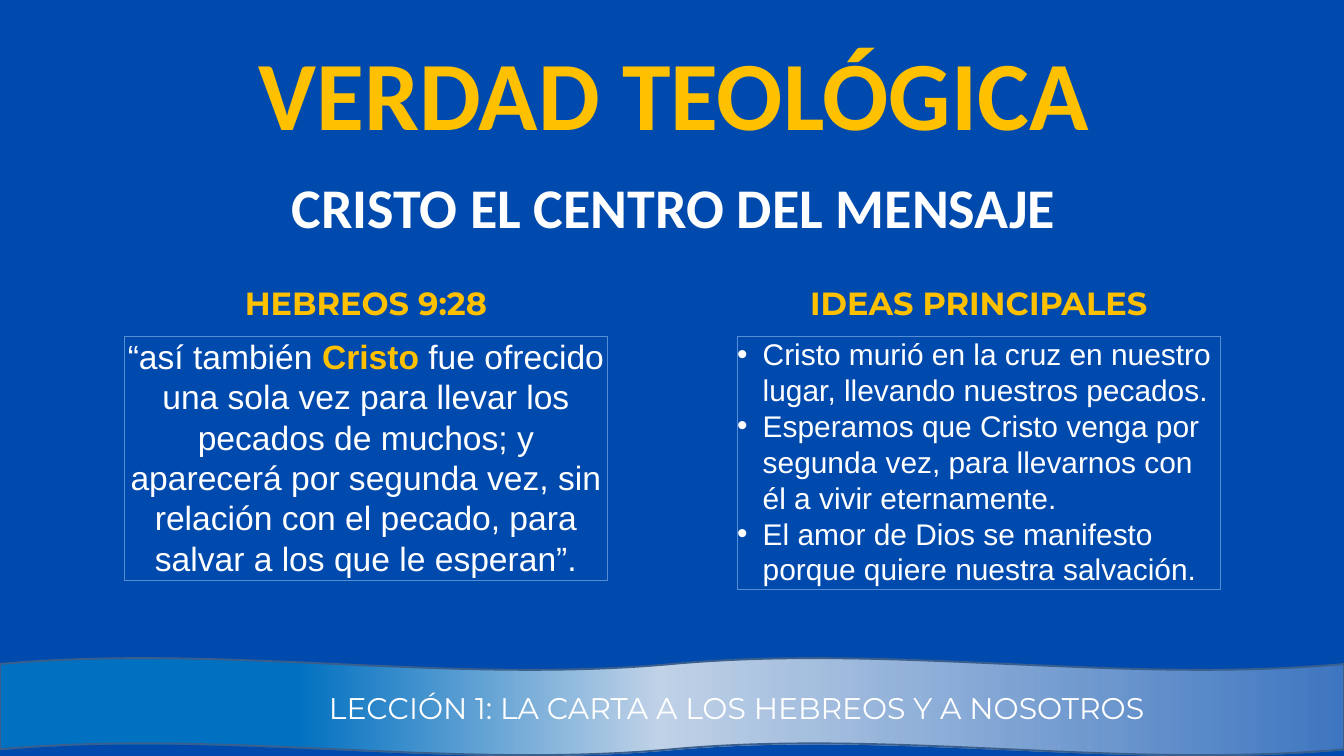
import copy
import lxml.etree
import pptx
import pptx.dml.color
import pptx.enum.shapes
import pptx.enum.text
import pptx.oxml.ns
import pptx.util

Inches = pptx.util.Inches
Pt = pptx.util.Pt
qn = pptx.oxml.ns.qn
align = pptx.enum.text.PP_ALIGN
kinds = pptx.enum.shapes.MSO_SHAPE
GOLD = "FFC000"
WHITE = "FFFFFF"


def hue(code):
    return pptx.dml.color.RGBColor.from_string(code)


def write(shape, text, size, font="Arial", color=WHITE, bold=False,
          lead=None, bullet=False, inset=(0, 0)):
    frame = shape.text_frame
    frame.word_wrap = True
    frame.auto_size = pptx.enum.text.MSO_AUTO_SIZE.SHAPE_TO_FIT_TEXT
    frame.vertical_anchor = pptx.enum.text.MSO_ANCHOR.TOP
    frame.margin_left = frame.margin_right = Inches(inset[0])
    frame.margin_top = frame.margin_bottom = Inches(inset[1])
    for row, line in enumerate(text.split("\n")):
        para = frame.add_paragraph() if row else frame.paragraphs[0]
        para.alignment = align.LEFT if bullet else align.CENTER
        if lead:
            para.line_spacing = Pt(lead)
        if bullet:
            props = para._p.get_or_add_pPr()
            props.set("marL", str(Inches(0.38)))
            props.set("indent", str(Inches(-0.38)))
            lead_font = lxml.etree.SubElement(props, qn("a:buFont"))
            lead_font.set("typeface", "Arial")
            lxml.etree.SubElement(props, qn("a:buChar")).set("char", "•")
        for part, words in enumerate(line.split("*")):
            run = para.add_run()
            run.text = words
            run.font.size = Pt(size)
            run.font.name = font
            run.font.bold = bold or part % 2 == 1
            run.font.color.rgb = hue(GOLD if part % 2 else color)


deck = pptx.Presentation()
deck.slide_width = Inches(20)
deck.slide_height = Inches(11.25)
slide = deck.slides.add_slide(deck.slide_layouts[5])
slide.background.fill.solid()
slide.background.fill.fore_color.rgb = hue("004AAD")
shapes = slide.shapes

title = shapes.title
title.left, title.top = Inches(3.15), Inches(0.26)
title.width, title.height = Inches(13.76), Inches(1.88)
write(title, "VERDAD TEOLÓGICA", 105, font="Calibri", color=GOLD,
      bold=True, lead=141.9)

theme = shapes.add_textbox(Inches(3.6), Inches(1.59), Inches(12.85), Inches(1.72))
write(theme, "CRISTO EL CENTRO DEL MENSAJE", 60, font="Calibri",
      bold=True, lead=141.9)

verse = ("“así también *Cristo* fue ofrecido una sola vez para llevar los "
         "pecados de muchos; y aparecerá por segunda vez, sin relación con "
         "el pecado, para salvar a los que le esperan”.")
ideas = ("Cristo murió en la cruz en nuestro lugar, llevando nuestros pecados.\n"
         "Esperamos que Cristo venga por segunda vez, para llevarnos con él a "
         "vivir eternamente.\n"
         "El amor de Dios se manifesto porque quiere nuestra salvación.")
columns = [
    (1.85, 3.64, "HEBREOS 9:28", verse, 36, False),
    (10.97, 3.77, "IDEAS PRINCIPALES", ideas, 32, True),
]
for left, height, head, body, size, bullet in columns:
    label = shapes.add_textbox(Inches(left), Inches(4.22), Inches(7.19), Inches(0.58))
    write(label, head, 34.3, font="Montserrat", color=GOLD, bold=True, lead=41.2)
    panel = shapes.add_shape(kinds.RECTANGLE, Inches(left), Inches(5),
                             Inches(7.19), Inches(height))
    panel.shadow.inherit = False
    panel.fill.background()
    panel.line.color.rgb = hue("558ED5")
    panel.line.width = Pt(0.75)
    write(panel, body, size, bullet=bullet)

wave = shapes.add_shape(kinds.DOUBLE_WAVE, Inches(0), Inches(9.79),
                        Inches(20), Inches(1.45))
wave.shadow.inherit = False
wave.line.color.rgb = hue("3A5F8C")
wave.line.width = Pt(2)
wave.fill.gradient()
wave.fill.gradient_angle = 0
stops = wave._element.spPr.find(qn("a:gradFill")).find(qn("a:gsLst"))
stops.insert(1, copy.deepcopy(stops[0]))
tones = [(0.22, "0070C0"), (0.49, "C0D2E7"), (1, "CAD9EB")]
for stop, (place, tone) in zip(wave.fill.gradient_stops, tones):
    stop.position = place
    stop.color.rgb = hue(tone)
lxml.etree.SubElement(stops[2][0], qn("a:alpha")).set("val", "30000")

foot = shapes.add_textbox(Inches(3.09), Inches(10.21), Inches(15.75), Inches(0.64))
write(foot, "LECCIÓN 1: LA CARTA A LOS HEBREOS Y A NOSOTROS", 32,
      font="Montserrat", inset=(0.1, 0.05))

deck.save("out.pptx")
